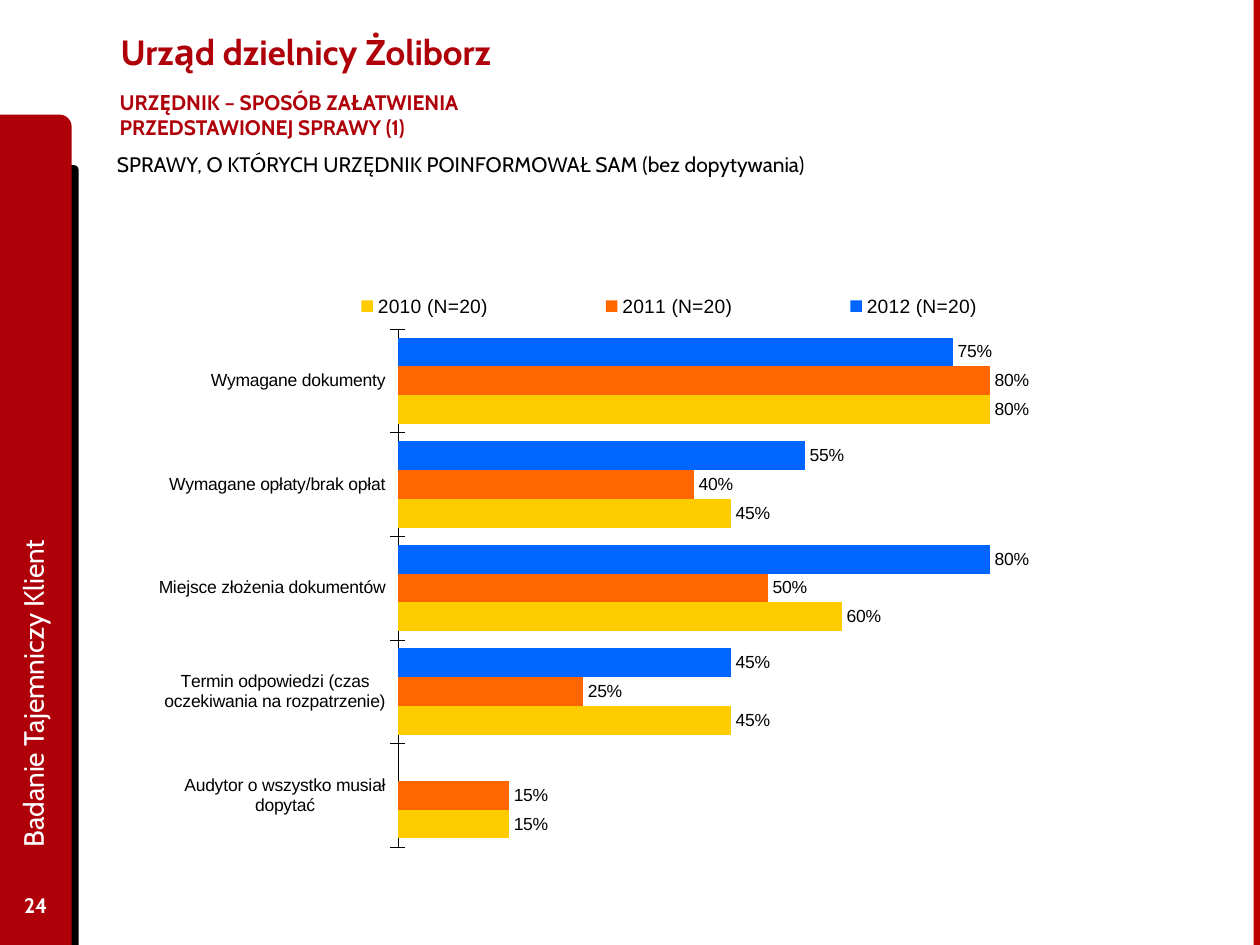
import pptx
import pptx.util
import pptx.chart.data
import pptx.dml.color
import pptx.enum.chart
import pptx.enum.shapes
import pptx.enum.text
import lxml.etree

Pt = pptx.util.Pt
COLORS = {
    "red": "AF000A", "edge": "BD0000", "black": "000000", "white": "FFFFFF",
    "blue": "0066FF", "orange": "FF6600", "yellow": "FFCC00",
}
CATEGORIES = [
    "Wymagane dokumenty", "Wymagane opłaty/brak opłat", "Miejsce złożenia dokumentów",
    "Termin odpowiedzi (czas oczekiwania na rozpatrzenie)", "Audytor o wszystko musiał dopytać",
]
SERIES = [
    ("2012 (N=20)", (0.75, 0.55, 0.8, 0.45, None), "blue"),
    ("2011 (N=20)", (0.8, 0.4, 0.5, 0.25, 0.15), "orange"),
    ("2010 (N=20)", (0.8, 0.45, 0.6, 0.45, 0.15), "yellow"),
]


def rgb(color):
    return pptx.dml.color.RGBColor.from_string(COLORS[color])


def style_font(font, size, color, name, bold=False):
    font.size, font.name, font.bold = Pt(size), name, bold
    font.color.rgb = rgb(color)


def add_text(page, box, text, size, color, bold=False, wrap=True, middle=False, inset=7.2):
    shape = page.shapes.add_textbox(*map(Pt, box))
    frame = shape.text_frame
    frame.word_wrap = wrap
    frame.margin_left = frame.margin_right = Pt(inset)
    if middle:
        frame.vertical_anchor = pptx.enum.text.MSO_ANCHOR.MIDDLE
    para = frame.paragraphs[0]
    para.text = text
    style_font(para.font, size, color, "Cabin", bold)
    return shape


def add_block(page, box, color, kind):
    shape = page.shapes.add_shape(kind, *map(Pt, box))
    shape.shadow.inherit = False
    shape.fill.solid()
    shape.fill.fore_color.rgb = rgb(color)
    shape.line.fill.background()


def add_sidebar(page, box):
    left, top, width, height = box
    rounded = pptx.enum.shapes.MSO_SHAPE.ROUND_1_RECTANGLE
    add_block(page, (left + 28, top + 28.8, 17, height - 28.8), "black", rounded)
    add_block(page, box, "red", rounded)
    number = add_text(page, (left, top + height - 37.4, width, 28.8), "24", 12, "white", True, middle=True)
    number.text_frame.paragraphs[0].alignment = pptx.enum.text.PP_ALIGN.CENTER
    length, depth = 414.7, 36.7
    center_x, center_y = left + 18.7, top + 218.5
    label = add_text(page, (center_x - length / 2, center_y - depth / 2, length, depth),
                     "Badanie Tajemniczy Klient", 16, "white", middle=True)
    label.rotation = 270


def add_heading(page, box):
    left, top, width, height = box
    add_text(page, (left, top, width, 51.8), "Urząd dzielnicy Żoliborz", 20, "red", True, middle=True)
    add_text(page, (left - 7.9, top + 43.9, 277, 23.8),
             "URZĘDNIK – SPOSÓB ZAŁATWIENIA PRZEDSTAWIONEJ SPRAWY (1)",
             12, "red", True, wrap=False, inset=14.4)
    add_text(page, (left - 2.2, top + height - 21.6, width + 8, 21.6),
             "SPRAWY, O KTÓRYCH URZĘDNIK POINFORMOWAŁ SAM (bez dopytywania)", 12, "black")


def set_layout(parent, box, after, inner=False):
    namespace = "{http://schemas.openxmlformats.org/drawingml/2006/chart}"
    for old in parent.findall(namespace + "layout"):
        parent.remove(old)
    layout = lxml.etree.Element(namespace + "layout")
    manual = lxml.etree.SubElement(layout, namespace + "manualLayout")
    settings = [("layoutTarget", "inner")] if inner else []
    settings += [("xMode", "edge"), ("yMode", "edge"), *zip("xywh", box)]
    for tag, value in settings:
        lxml.etree.SubElement(manual, namespace + tag).set("val", str(value))
    previous = parent.find(namespace + after) if after else None
    parent.insert(0 if previous is None else parent.index(previous) + 1, layout)


def add_results(page, box):
    data = pptx.chart.data.CategoryChartData(number_format="0%")
    data.categories = CATEGORIES
    for name, values, color in SERIES:
        data.add_series(name, values)
    kinds = pptx.enum.chart
    chart = page.shapes.add_chart(kinds.XL_CHART_TYPE.BAR_CLUSTERED, *map(Pt, box), data).chart
    chart.has_title = False
    style_font(chart.font, 9.8, "black", "Arial")

    plot = chart.plots[0]
    plot.gap_width, plot.overlap, plot.vary_by_categories = 60, 0, False
    for series, (name, values, color) in zip(plot.series, SERIES):
        series.invert_if_negative = False
        series.format.fill.solid()
        series.format.fill.fore_color.rgb = rgb(color)
        labels = series.data_labels
        labels.show_value = True
        labels.number_format, labels.number_format_is_linked = "0%", False
        labels.position = kinds.XL_LABEL_POSITION.OUTSIDE_END
        style_font(labels.font, 10, "black", "Arial")

    axis = chart.category_axis
    axis.reverse_order = True
    axis.major_tick_mark = kinds.XL_TICK_MARK.CROSS
    axis.format.line.width = Pt(0.25)
    axis.format.line.color.rgb = rgb("black")
    style_font(axis.tick_labels.font, 10, "black", "Arial")
    scale = chart.value_axis
    scale.minimum_scale, scale.maximum_scale, scale.major_unit = 0, 1, 0.2
    scale.has_major_gridlines = False
    scale.visible = False

    chart.has_legend = True
    legend = chart.legend
    legend.position = kinds.XL_LEGEND_POSITION.RIGHT
    legend.include_in_layout = False
    style_font(legend.font, 11, "black", "Arial")
    set_layout(legend._element, (0.1, 0.01, 0.85, 0.06), "legendPos")
    set_layout(chart._chartSpace.chart.plotArea, (0.25, 0.08, 0.75, 0.91), None, True)


def main():
    deck = pptx.Presentation()
    deck.slide_width, deck.slide_height = Pt(720), Pt(540)
    page = deck.slides.add_slide(deck.slide_layouts[6])
    add_sidebar(page, (0, 65.5, 41, 474.5))
    add_block(page, (716.4, 0, 3.6, 540), "edge", pptx.enum.shapes.MSO_SHAPE.RECTANGLE)
    add_heading(page, (61.9, 3.6, 559.4, 100.8))
    add_results(page, (86.4, 162, 563.8, 325.4))
    deck.save("out.pptx")


if __name__ == "__main__":
    main()
